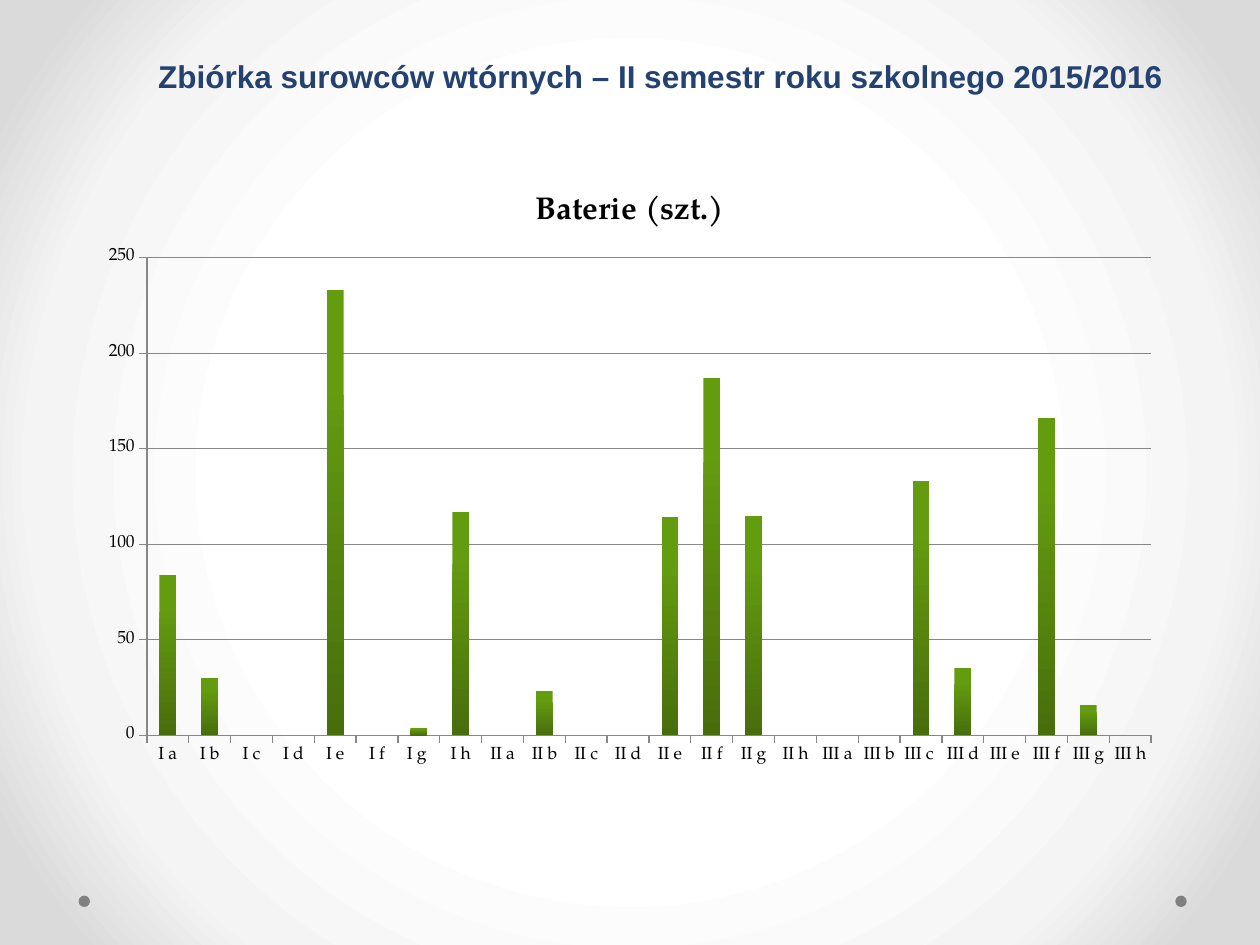
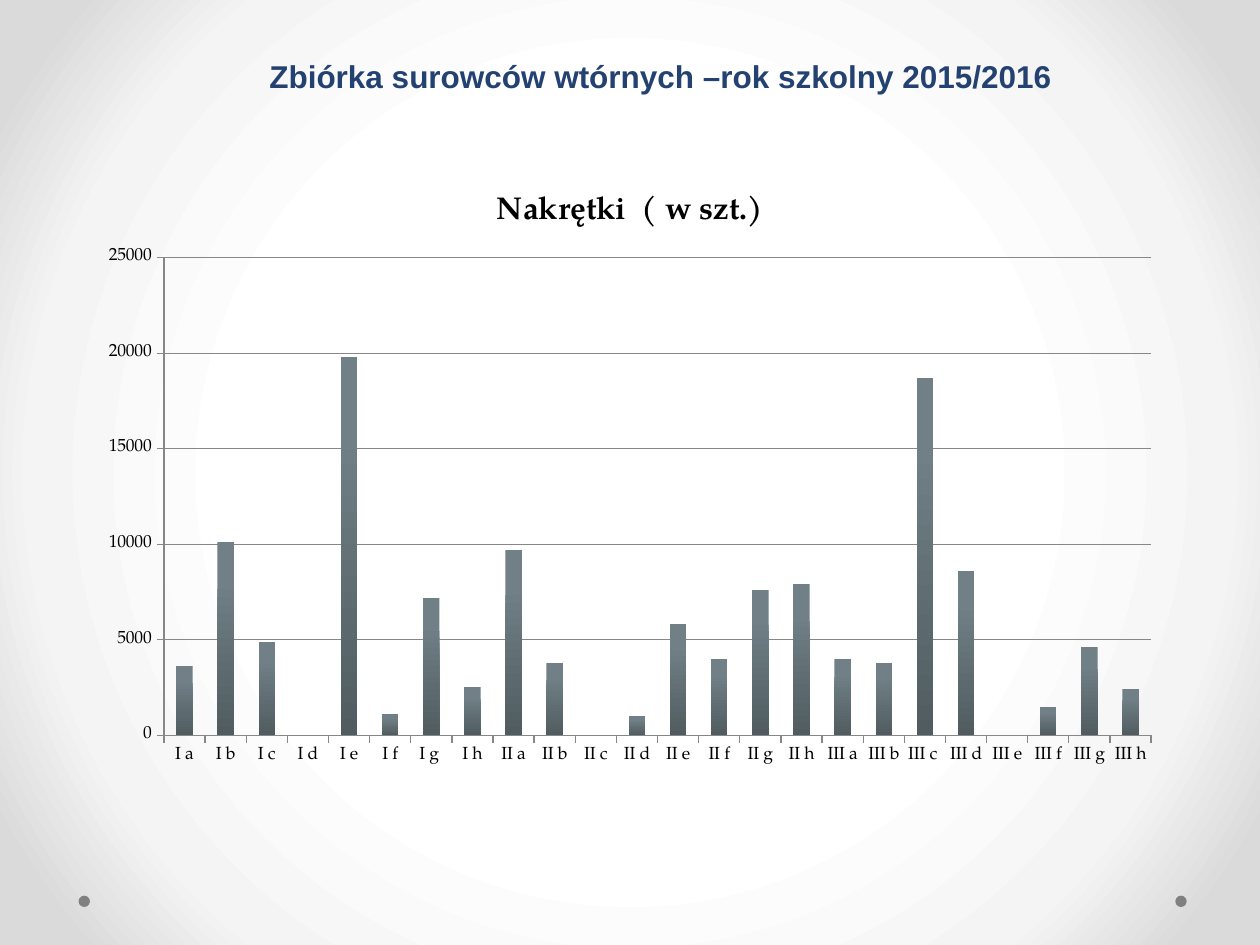
import pptx
import pptx.chart.data
import pptx.dml.color
import pptx.enum.chart
import pptx.enum.shapes
import pptx.enum.text
import pptx.oxml
import pptx.oxml.ns
import pptx.util

Pt = pptx.util.Pt
RGB = pptx.dml.color.RGBColor

NAVY = RGB(0x23, 0x42, 0x71)
BLACK = RGB(0, 0, 0)
DOT_GREY = RGB(0x80, 0x80, 0x80)
LINE_GREY = RGB(0x87, 0x87, 0x87)
GREENS = RGB(0x64, 0x9C, 0x10), RGB(0x48, 0x6E, 0x0C)
SLATES = RGB(0x70, 0x80, 0x86), RGB(0x50, 0x5C, 0x60)
GLOW = (50, RGB(0xFF, 0xFF, 0xFF)), (76, RGB(0xF4, 0xF4, 0xF4)), (92, RGB(0xDA, 0xDA, 0xDA))

TITLE_FONT = "Arial"
CHART_FONT = "TeX Gyre Pagella"
SLIDE_BOX = 0, 0, 720, 540
TITLE_BOX = 60, 26, 635, 64
CHART_BOX = 49.8, 96.5, 620.4, 347.5

CLASSES = ["I a", "I b", "I c", "I d", "I e", "I f", "I g ", "I h",
           "II a", "II b", "II c", "II d", "II e", "II f", "II g", "II h",
           "III a", "III b", "III c ", "III d", "III e", "III f", "III g", "III h"]
BATTERIES = [84, 30, None, None, 233, None, 4, 117,
             None, 23, None, None, 114, 187, 115, None,
             None, None, 133, 35, None, 166, 16, None]
CAPS = [3600, 10100, 4900, None, 19800, 1100, 7200, 2500,
        9700, 3800, None, 1000, 5800, 4000, 7600, 7900,
        4000, 3800, 18700, 8600, None, 1500, 4600, 2400]


def set_background(master):
    """Give the master a round glow that every slide inherits."""
    master.background.fill.gradient()
    old = master.element.find(".//" + pptx.oxml.ns.qn("a:gradFill"))
    stops = "".join(f'<a:gs pos="{pos * 1000}"><a:srgbClr val="{color}"/></a:gs>'
                    for pos, color in GLOW)
    new = pptx.oxml.parse_xml(
        f'<a:gradFill {pptx.oxml.ns.nsdecls("a")} rotWithShape="1"><a:gsLst>{stops}</a:gsLst>'
        '<a:path path="circle"><a:fillToRect l="50000" t="50000" r="50000" b="50000"/></a:path>'
        '</a:gradFill>')
    old.getparent().replace(old, new)


def add_dots(s, box):
    """Place a small dot near each lower corner of the box."""
    x, y, w, h = box
    size, inset, rise = 6.5, 44.9, 28.2
    for left in (x + w - inset - size + 3, x + inset):
        sp = s.shapes.add_shape(pptx.enum.shapes.MSO_SHAPE.OVAL, Pt(left), Pt(y + h - rise),
                                Pt(size), Pt(size))
        sp.shadow.inherit = False
        sp.fill.solid()
        sp.fill.fore_color.rgb = DOT_GREY
        sp.line.fill.background()


def add_title(s, box, text):
    """Write the centred slide title in the box."""
    tf = s.shapes.add_textbox(*map(Pt, box)).text_frame
    tf.word_wrap = True
    p = tf.paragraphs[0]
    p.text = text
    p.alignment = pptx.enum.text.PP_ALIGN.CENTER
    p.line_spacing = 1.15
    p.space_after = Pt(10)
    set_font(p.runs[0].font, TITLE_FONT, 18, NAVY, True)


def set_font(font, name, size, color, bold):
    """Set the face, size, colour and weight of a font."""
    font.name = name
    font.size = Pt(size)
    font.color.rgb = color
    font.bold = bold


def add_column_chart(s, box, title, series_name, values, top, colors):
    """Draw one series of columns by class in the box."""
    data = pptx.chart.data.CategoryChartData()
    data.categories = CLASSES
    data.add_series(series_name, values)
    chart = s.shapes.add_chart(pptx.enum.chart.XL_CHART_TYPE.COLUMN_CLUSTERED,
                               *map(Pt, box), data).chart
    set_font(chart.font, CHART_FONT, 10, BLACK, False)
    chart.has_legend = False
    tf = chart.chart_title.text_frame
    tf.text = title
    set_font(tf.paragraphs[0].runs[0].font, CHART_FONT, 18, BLACK, True)

    plot = chart.plots[0]
    plot.gap_width = 150
    plot.vary_by_categories = False
    fill = plot.series[0].format.fill
    fill.gradient()
    fill.gradient_angle = 270
    for stop, position, color in zip(fill.gradient_stops, (0.2, 1), colors):
        stop.position = position
        stop.color.rgb = color

    chart.value_axis.minimum_scale = 0
    chart.value_axis.maximum_scale = top
    chart.value_axis.major_unit = top / 5
    chart.value_axis.has_major_gridlines = True
    for part in (chart.category_axis, chart.value_axis, chart.value_axis.major_gridlines):
        part.format.line.color.rgb = LINE_GREY
        part.format.line.width = Pt(0.75)
    for axis in (chart.category_axis, chart.value_axis):
        axis.major_tick_mark = pptx.enum.chart.XL_TICK_MARK.OUTSIDE


def add_chart_slide(prs, title, *chart_parts):
    """Add a slide with the shared dots, a title and a column chart."""
    s = prs.slides.add_slide(prs.slide_layouts[6])
    add_dots(s, SLIDE_BOX)
    add_title(s, TITLE_BOX, title)
    add_column_chart(s, CHART_BOX, *chart_parts)


def main():
    """Build the deck and save it."""
    prs = pptx.Presentation()
    prs.slide_width, prs.slide_height = map(Pt, SLIDE_BOX[2:])
    set_background(prs.slide_master)
    add_chart_slide(prs, "Zbiórka surowców wtórnych – II semestr roku szkolnego 2015/2016",
                    "Baterie (szt.)", "Baterie (szt.)", BATTERIES, 250, GREENS)
    add_chart_slide(prs, "Zbiórka surowców wtórnych –rok szkolny 2015/2016",
                    "Nakrętki  ( w szt.)", "Series 1", CAPS, 25000, SLATES)
    prs.save("out.pptx")


if __name__ == "__main__":
    main()
